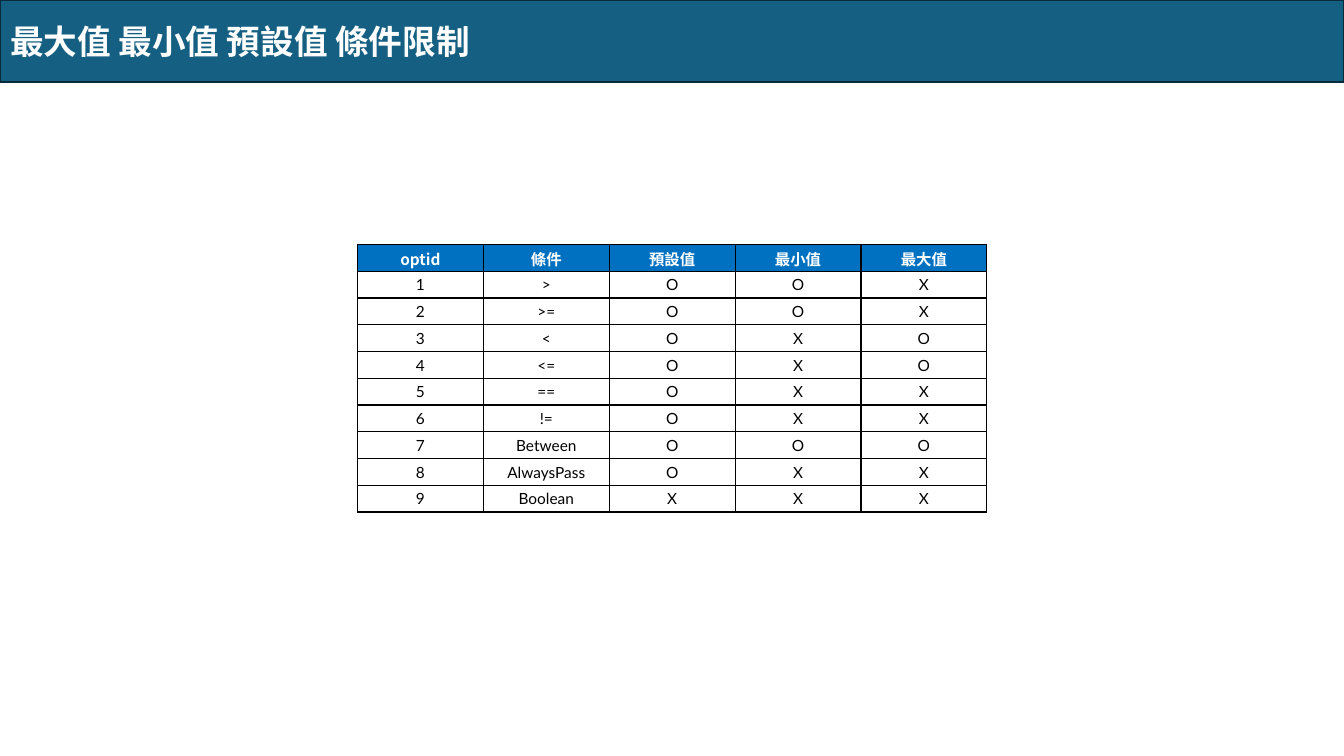
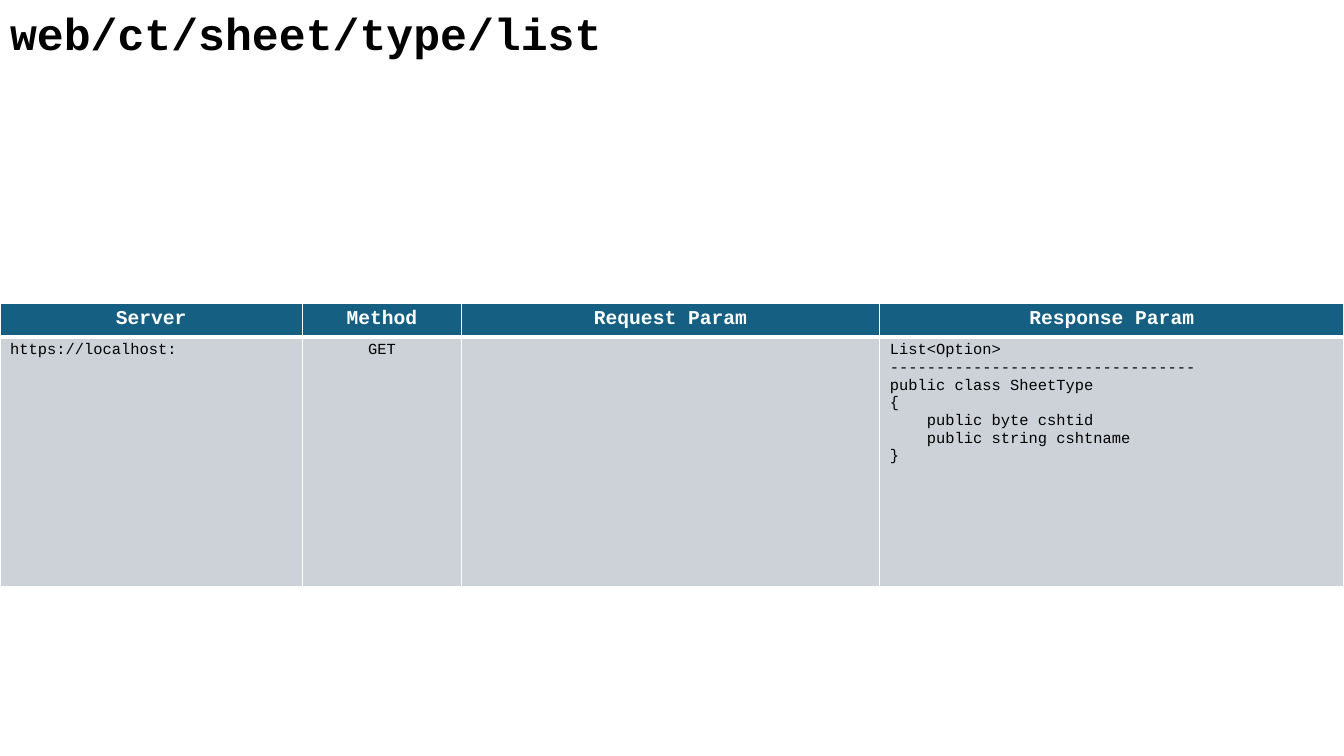
import dataclasses

import lxml.etree
import pptx
import pptx.dml.color
import pptx.enum.text
import pptx.oxml.ns
import pptx.util

Cm, Pt = pptx.util.Cm, pptx.util.Pt
RGB = pptx.dml.color.RGBColor.from_string
Align, Anchor = pptx.enum.text.PP_ALIGN, pptx.enum.text.MSO_ANCHOR
qn = pptx.oxml.ns.qn

# Content
LIMITS = {
    "title": "最大值 最小值 預設值 條件限制",
    "head": ("optid", "條件", "預設值", "最小值", "最大值"),
    # condition, then default / minimum / maximum flags
    "rules": [
        (">", "OOX"), (">=", "OOX"), ("<", "OXO"),
        ("<=", "OXO"), ("==", "OXX"), ("!=", "OXX"),
        ("Between", "OOO"), ("AlwaysPass", "OXX"), ("Boolean", "XXX"),
    ],
}
API = {
    "title": "web/ct/sheet/type/list",
    "head": ("Server", "Method", "Request Param", "Response Param"),
    "call": ("https://localhost:", "GET", "", """List<Option>
---------------------------------
public class SheetType
{
    public byte cshtid
    public string cshtname
}"""),
}


# Shared look
@dataclasses.dataclass(frozen=True)
class Theme:
    teal: str = "156082"
    edge: str = "092A39"
    blue: str = "0070C0"
    gray: str = "CCD2D8"
    white: str = "FFFFFF"
    black: str = "000000"
    band: str = "Noto Sans CJK SC"
    head: str = "Noto Sans CJK TC"
    body: str = "Lato"
    code: str = "Courier New"
    big: int = 32
    title: int = 24
    label: int = 14
    small: int = 11
    width: float = 33.87
    height: float = 19.05


T = Theme()


def write(frame, text, font=T.code, size=T.small, color=T.black,
          bold=False, align=Align.LEFT):
    """Put each line of text in its own paragraph."""
    for i, line in enumerate(text.split("\n")):
        para = frame.paragraphs[0] if i == 0 else frame.add_paragraph()
        para.alignment = align
        para.line_spacing = 1.0
        run = para.add_run()
        run.text = line
        face = run.font
        face.name, face.size, face.bold = font, Pt(size), bold
        face.color.rgb = RGB(color)
        # East Asian glyphs take their own font entry
        lxml.etree.SubElement(face._element, qn("a:ea"), typeface=font)


def start(deck, text, width, height, **style):
    """Add a slide with its title in the top left corner."""
    slide = deck.slides.add_slide(deck.slide_layouts[5])
    title = slide.shapes.title
    title.left, title.top = Cm(0), Cm(0)
    title.width, title.height = Cm(width), Cm(height)
    frame = title.text_frame
    frame.auto_size = pptx.enum.text.MSO_AUTO_SIZE.NONE
    frame.vertical_anchor = Anchor.MIDDLE
    write(frame, text, bold=True, **style)
    return slide


def grid(slide, left, top, cols, rows):
    """Add an unbanded table with the given widths and heights."""
    table = slide.shapes.add_table(
        len(rows), len(cols), Cm(left), Cm(top),
        Cm(sum(cols)), Cm(sum(rows))).table
    table.first_row = table.horz_banding = False
    for part, size in zip(table.columns, cols):
        part.width = Cm(size)
    for part, size in zip(table.rows, rows):
        part.height = Cm(size)
    return table


def dress(cell, line, fill=None, top=1, base=1):
    """Draw the four borders of a cell, then its fill."""
    props = cell._tc.get_or_add_tcPr()
    for side, size in (("L", 1), ("R", 1), ("T", top), ("B", base)):
        edge = lxml.etree.SubElement(
            props, qn("a:ln" + side), w=str(Pt(size)))
        paint = lxml.etree.SubElement(edge, qn("a:solidFill"))
        lxml.etree.SubElement(paint, qn("a:srgbClr"), val=line)
    if fill:
        cell.fill.solid()
        cell.fill.fore_color.rgb = RGB(fill)
    else:
        cell.fill.background()


def limits(deck):
    slide = start(deck, LIMITS["title"], T.width, 2.06,
                  font=T.band, size=T.title, color=T.white)
    # Title band
    band = slide.shapes.title
    band.fill.solid()
    band.fill.fore_color.rgb = RGB(T.teal)
    band.line.color.rgb = RGB(T.edge)
    band.line.width = Pt(1.5)

    # Table of conditions
    data = [LIMITS["head"]] + [
        (str(i), rule, *flags)
        for i, (rule, flags) in enumerate(LIMITS["rules"], 1)]
    wide, high = 15.86, 6.74
    count = len(LIMITS["head"])
    table = grid(slide, 9.01, 6.16, [wide / count] * count,
                 [high / len(data)] * len(data))
    for r, row in enumerate(data):
        top = r == 0
        for c, text in enumerate(row):
            cell = table.cell(r, c)
            cell.margin_left = cell.margin_right = Cm(0.02)
            cell.margin_top, cell.margin_bottom = Cm(0.02), Cm(0)
            cell.vertical_anchor = Anchor.MIDDLE
            dress(cell, T.black, T.blue if top else None)
            write(cell.text_frame, text, bold=top, align=Align.CENTER,
                  font=T.head if top else T.body,
                  color=T.white if top else T.black)


def api(deck):
    slide = start(deck, API["title"], 24, 1.63, size=T.big)

    # Table of the call
    table = grid(slide, 0, 7.65, [7.62, 4.01, 10.54, 11.7], [0.84, 6.3])
    for c, (name, text) in enumerate(zip(API["head"], API["call"])):
        head, body = table.cell(0, c), table.cell(1, c)
        dress(head, T.white, T.teal, base=3)
        dress(body, T.white, T.gray, top=3)
        write(head.text_frame, name, size=T.label, color=T.white,
              bold=True, align=Align.CENTER)
        if text:
            write(body.text_frame, text,
                  align=Align.CENTER if name == "Method" else Align.LEFT)


def main():
    deck = pptx.Presentation()
    deck.slide_width, deck.slide_height = Cm(T.width), Cm(T.height)
    limits(deck)
    api(deck)
    deck.save("out.pptx")


if __name__ == "__main__":
    main()
